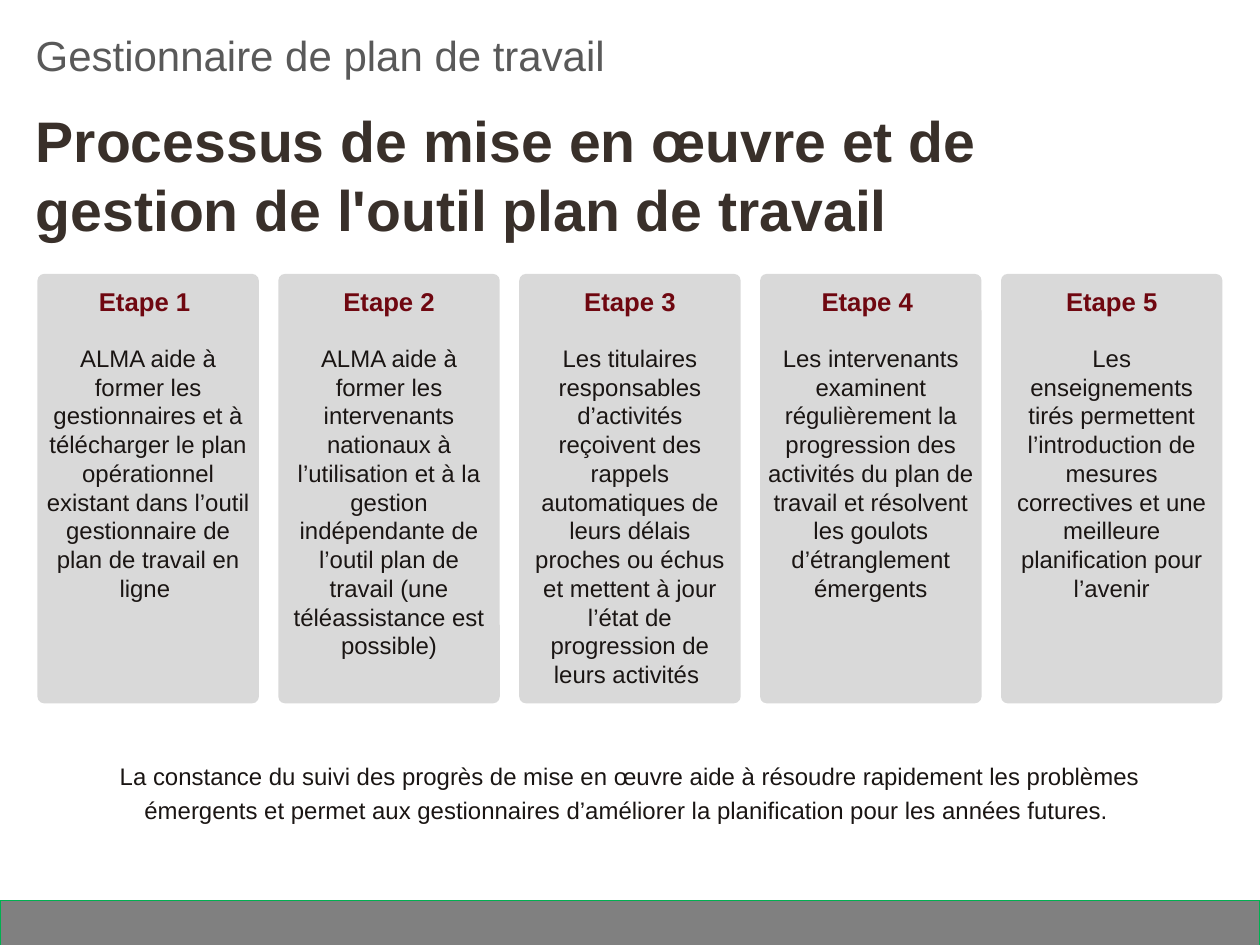
"""Build the slide on the five steps of the work plan tool."""
from dataclasses import dataclass
from typing import Any

import pptx
import pptx.dml.color
import pptx.enum.shapes
import pptx.enum.text
import pptx.util

Pt = pptx.util.Pt
RGBColor = pptx.dml.color.RGBColor
ALIGN = pptx.enum.text.PP_ALIGN
SHAPES = pptx.enum.shapes.MSO_SHAPE

TITLE_BROWN = RGBColor(0x39, 0x30, 0x2A)
SUBTITLE_GREY = RGBColor(0x59, 0x59, 0x59)
HEADING_RED = RGBColor(0x6F, 0x07, 0x10)
BODY_BLACK = RGBColor(0x1A, 0x15, 0x13)
CARD_GREY = RGBColor(0xD9, 0xD9, 0xD9)
BAND_GREY = RGBColor(0x80, 0x80, 0x80)
BAND_GREEN = RGBColor(0x00, 0xB0, 0x50)

SLIDE_WIDTH, SLIDE_HEIGHT = 705.6, 529.2
TEXT_LEFT, TEXT_WIDTH = 20, 635
CARD_LEFT, CARD_TOP, CARD_WIDTH, CARD_HEIGHT = 21, 153.4, 124, 240.5
CARD_PITCH = 134.9


@dataclass(frozen=True)
class Area:
    left: float
    top: float
    width: float
    height: float

    def lengths(self) -> list[pptx.util.Length]:
        return [Pt(value) for value in (self.left, self.top, self.width, self.height)]


@dataclass(frozen=True)
class TextStyle:
    font: dict[str, Any]
    paragraph: dict[str, Any]
    color: RGBColor
    inset: float = 0


@dataclass(frozen=True)
class Step:
    heading: str
    body: str


TITLE = TextStyle({"size": Pt(32), "bold": True},
                  {"alignment": ALIGN.LEFT, "line_spacing": 1.0}, TITLE_BROWN)
SUBTITLE = TextStyle({"size": Pt(23.5)}, {"line_spacing": 0.9}, SUBTITLE_GREY)
HEADING = TextStyle({"size": Pt(14.4), "bold": True},
                    {"alignment": ALIGN.CENTER, "line_spacing": 0.9}, HEADING_RED)
BODY = TextStyle({"size": Pt(13.4)},
                 {"alignment": ALIGN.CENTER, "line_spacing": 1.0}, BODY_BLACK, 4)
SUMMARY = TextStyle({"size": Pt(13.4)},
                    {"alignment": ALIGN.CENTER, "line_spacing": 1.2}, BODY_BLACK)

STEPS = [
    Step("Etape 1 ", "ALMA aide à former les gestionnaires et à télécharger le plan "
         "opérationnel existant dans l’outil gestionnaire de plan de travail en ligne "),
    Step("Etape 2", "ALMA aide à former les intervenants nationaux à l’utilisation et à "
         "la gestion indépendante de l’outil plan de travail (une téléassistance est "
         "possible)"),
    Step("Etape 3", "Les titulaires responsables d’activités reçoivent des rappels "
         "automatiques de leurs délais proches ou échus et mettent à jour l’état de "
         "progression de leurs activités "),
    Step("Etape 4 ", "Les intervenants examinent régulièrement la progression des "
         "activités du plan de travail et résolvent les goulots d’étranglement émergents"),
    Step("Etape 5", "Les enseignements tirés permettent l’introduction de mesures "
         "correctives et une meilleure planification pour l’avenir"),
]


def set_format(target: Any, values: dict[str, Any]) -> None:
    for name, value in values.items():
        setattr(target, name, value)


def write_text(box: Any, text: str, style: TextStyle) -> None:
    frame = box.text_frame
    set_format(frame, {
        "word_wrap": True,
        "auto_size": pptx.enum.text.MSO_AUTO_SIZE.NONE,
        "vertical_anchor": pptx.enum.text.MSO_ANCHOR.TOP,
        "margin_left": Pt(style.inset), "margin_right": Pt(style.inset),
        "margin_top": Pt(0), "margin_bottom": Pt(0),
    })
    para = frame.paragraphs[0]
    set_format(para, style.paragraph)
    span = para.add_run()
    span.text = text
    set_format(span.font, {"name": "Arial", **style.font})
    span.font.color.rgb = style.color


def add_text(page: Any, area: Area, text: str, style: TextStyle) -> None:
    write_text(page.shapes.add_textbox(*area.lengths()), text, style)


def add_panel(page: Any, kind: Any, area: Area, fill: RGBColor) -> Any:
    panel = page.shapes.add_shape(kind, *area.lengths())
    panel.shadow.inherit = False
    panel.fill.solid()
    panel.fill.fore_color.rgb = fill
    panel.line.fill.background()
    return panel


def add_step(page: Any, left: float, step: Step) -> None:
    card = add_panel(page, SHAPES.ROUNDED_RECTANGLE,
                     Area(left, CARD_TOP, CARD_WIDTH, CARD_HEIGHT), CARD_GREY)
    card.adjustments[0] = 0.03
    add_text(page, Area(left, 162, CARD_WIDTH, 16), step.heading, HEADING)
    add_text(page, Area(left, 192.4, CARD_WIDTH, 196), step.body, BODY)


def main() -> None:
    deck = pptx.Presentation()
    set_format(deck, {"slide_width": Pt(SLIDE_WIDTH), "slide_height": Pt(SLIDE_HEIGHT)})
    page = deck.slides.add_slide(deck.slide_layouts[5])

    band = add_panel(page, SHAPES.RECTANGLE, Area(0, 504.4, SLIDE_WIDTH, 26.6), BAND_GREY)
    band.line.color.rgb = BAND_GREEN
    band.line.width = Pt(0.75)

    title = page.shapes.title
    title_area = Area(TEXT_LEFT, 59, TEXT_WIDTH, 77.8)
    set_format(title, dict(zip(("left", "top", "width", "height"), title_area.lengths())))
    write_text(title, "Processus de mise en œuvre et de gestion de l'outil plan de travail",
               TITLE)
    add_text(page, Area(TEXT_LEFT, 19.8, TEXT_WIDTH, 26),
             "Gestionnaire de plan de travail", SUBTITLE)

    for index, step in enumerate(STEPS):
        add_step(page, CARD_LEFT + index * CARD_PITCH, step)

    add_text(page, Area(35.3, 423.2, TEXT_WIDTH, 37.4),
             "La constance du suivi des progrès de mise en œuvre aide à résoudre "
             "rapidement les problèmes émergents et permet aux gestionnaires d’améliorer "
             "la planification pour les années futures. ", SUMMARY)
    deck.save("out.pptx")


if __name__ == "__main__":
    main()
